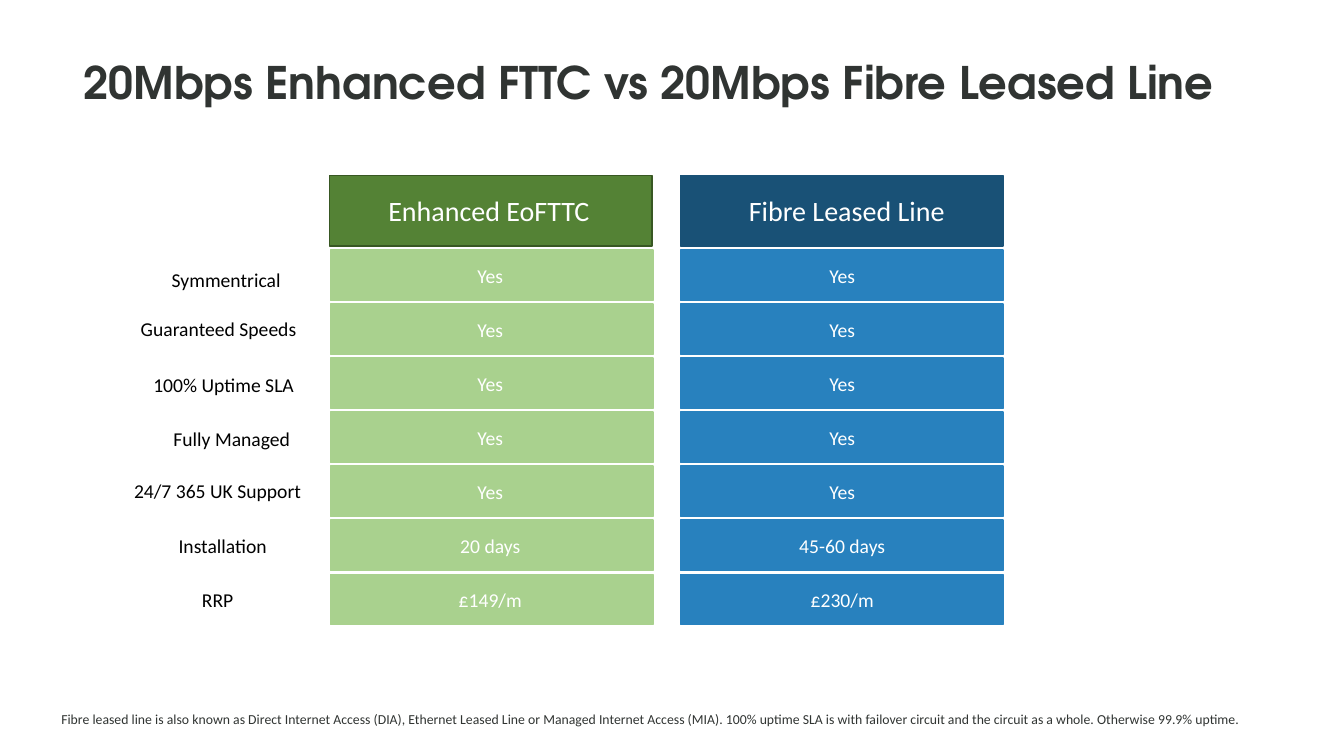
from pptx import Presentation
from pptx.dml.color import RGBColor
from pptx.enum.shapes import MSO_SHAPE
from pptx.enum.text import MSO_ANCHOR, MSO_AUTO_SIZE, PP_ALIGN
from pptx.util import Pt

WHITE, BLACK, CHARCOAL = "FFFFFF", "000000", "303432"

ROW_TOP, ROW_PITCH, ROW_HEIGHT = 178.6, 38.6, 36
HEADER_TOP, HEADER_HEIGHT = 125.3, 50.4
COLUMN_WIDTH = 230.4
LABEL_WIDTH = 155

# Label, its centre and its top
FEATURES = [
    ("Symmentrical", 161.6, 187.9),
    ("Guaranteed Speeds", 156.2, 222.5),
    ("100% Uptime SLA", 159.8, 262.8),
    ("Fully Managed", 165.6, 301.7),
    ("24/7 365 UK Support", 155.5, 338.4),
    ("Installation", 159.1, 378),
    ("RRP", 155.5, 416.2),
]

# Title, header left, cell left, title centre, value centre, header fill and line, cell fill, values
PRODUCTS = [
    ("Enhanced EoFTTC", 235.4, 236, 349.2, 350.2, "548235", "385723", "A9D18E",
     ["Yes"] * 5 + ["20 days", "£149/m"]),
    ("Fibre Leased Line", 486, 486.2, 604.8, 601.6, "195176", "195176", "2881BE",
     ["Yes"] * 5 + ["45-60 days", "£230/m"]),
]


def color(value):
    return RGBColor.from_string(value)


class ComparisonPage:
    def __init__(self, deck, font, title_font):
        self.page = deck.slides.add_slide(deck.slide_layouts[6])
        self.font = font
        self.title_font = title_font

    def block(self, left, top, height, fill, line):
        box = self.page.shapes.add_shape(
            MSO_SHAPE.RECTANGLE, Pt(left), Pt(top), Pt(COLUMN_WIDTH), Pt(height))
        box.shadow.inherit = False
        box.fill.solid()
        box.fill.fore_color.rgb = color(fill)
        box.line.color.rgb = color(line)
        box.line.width = Pt(1)

    def text(self, words, left, top, width, height, size, ink, font=None):
        """Add a wrapped text box and return its frame, paragraph and run."""
        box = self.page.shapes.add_textbox(Pt(left), Pt(top), Pt(width), Pt(height))
        frame = box.text_frame
        frame.word_wrap = True
        para = frame.paragraphs[0]
        span = para.add_run()
        span.text = words
        span.font.name = font or self.font
        span.font.size = Pt(size)
        span.font.color.rgb = color(ink)
        return frame, para, span

    def centred(self, words, centre, top, width, height, size, ink):
        frame, para, _ = self.text(
            words, centre - width / 2, top, width, height, size, ink)
        frame.auto_size = MSO_AUTO_SIZE.SHAPE_TO_FIT_TEXT
        para.alignment = PP_ALIGN.CENTER

    def title(self, words):
        frame, para, span = self.text(
            words, 52.6, 28.1, 828, 53.3, 32, CHARCOAL, self.title_font)
        frame.vertical_anchor = MSO_ANCHOR.BOTTOM
        para.line_spacing = 0.9
        span.font.bold = True

    def footnote(self, words):
        _, para, _ = self.text(words, 36.7, 506.2, 897.8, 27.4, 9.8, CHARCOAL)
        para.line_spacing = 0.8

    def product(self, name, header_left, cell_left, name_centre, value_centre,
                header_fill, header_line, cell_fill, values):
        self.block(header_left, HEADER_TOP, HEADER_HEIGHT, header_fill, header_line)
        self.centred(name, name_centre, 134.6, 229, 31.5, 20, WHITE)
        for row, value in enumerate(values):
            top = ROW_TOP + row * ROW_PITCH
            self.block(cell_left, top, ROW_HEIGHT, cell_fill, cell_fill)
            self.centred(value, value_centre, top + 6.2, 229, 24.2, 14, WHITE)


def main():
    deck = Presentation()
    deck.slide_width, deck.slide_height = Pt(960), Pt(540)
    page = ComparisonPage(deck, "Calibri", "TeX Gyre Adventor")
    page.title("20Mbps Enhanced FTTC vs 20Mbps Fibre Leased Line")
    for label, centre, top in FEATURES:
        page.centred(label, centre, top, LABEL_WIDTH, 24.2, 14, BLACK)
    for product in PRODUCTS:
        page.product(*product)
    page.footnote(
        "Fibre leased line is also known as Direct Internet Access (DIA), "
        "Ethernet Leased Line or Managed Internet Access (MIA). 100% uptime SLA is "
        "with failover circuit and the circuit as a whole. Otherwise 99.9% uptime.")
    deck.save("out.pptx")


if __name__ == "__main__":
    main()
